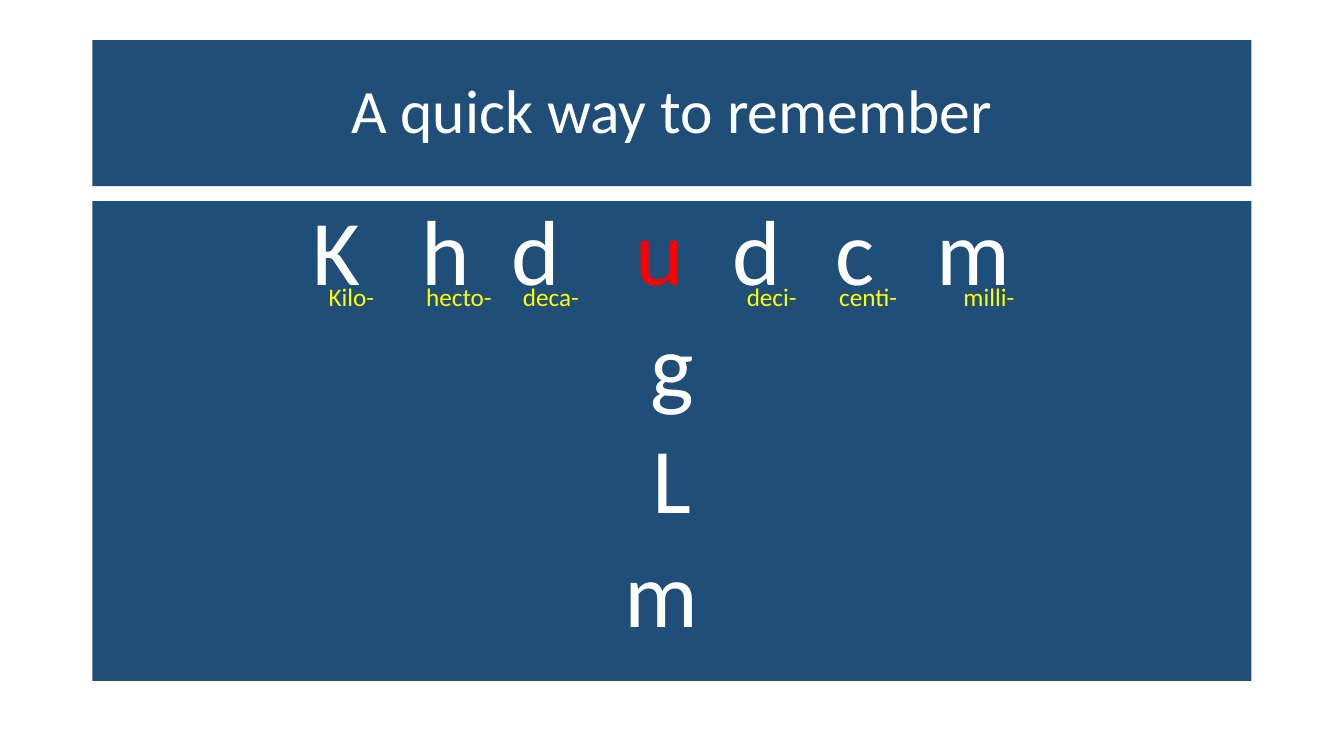
from pptx import Presentation
from pptx.dml.color import RGBColor
from pptx.enum.shapes import MSO_SHAPE
from pptx.enum.text import MSO_ANCHOR, PP_ALIGN
from pptx.oxml.ns import qn
from pptx.util import Cm, Pt
from lxml.etree import SubElement

COLORS = {"panel": "1F4E79", "text": "FFFFFF", "unit": "FF0000", "prefix": "FFFF00"}
FONT = "Calibri"
PANEL_LEFT, PANEL_WIDTH = 2.33, 29.21
PREFIX_TOP, PREFIX_HEIGHT = 6.96, 1.02

# Letter and the centre of its column, measured from the text edge of the panel
LETTERS = [("K", 5.89), ("h", 8.66), ("d", 10.92), ("u", 14.05),
           ("d", 16.48), ("c", 18.97), ("m", 21.95)]
# Prefix, left edge and width of its label
PREFIXES = [("Kilo-", 8.03, 1.68), ("hecto-", 10.49, 2.18), ("deca-", 12.93, 1.93),
            ("deci-", 18.57, 1.78), ("centi-", 20.9, 2.01), ("milli-", 24.03, 1.8)]
BASE_UNITS = ["g", "L", "m "]


class SlideBuilder:
    def __init__(self, deck):
        self.page = deck.slides.add_slide(deck.slide_layouts[6])

    def style(self, target, size, color):
        target.font.name = FONT
        target.font.size = Pt(size)
        target.font.color.rgb = RGBColor.from_string(COLORS[color])

    def panel(self, top, height, anchor):
        box = self.page.shapes.add_shape(
            MSO_SHAPE.RECTANGLE, Cm(PANEL_LEFT), Cm(top), Cm(PANEL_WIDTH), Cm(height))
        box.shadow.inherit = False
        box.fill.solid()
        box.fill.fore_color.rgb = RGBColor.from_string(COLORS["panel"])
        box.line.fill.background()
        box.text_frame.word_wrap = True
        box.text_frame.vertical_anchor = anchor
        return box.text_frame

    def line(self, para, text, size):
        para.alignment = PP_ALIGN.CENTER
        para.line_spacing = 0.9
        para.text = text
        self.style(para, size, "text")

    def letter_row(self, para, letters):
        para.alignment = PP_ALIGN.LEFT
        para.line_spacing = 0.9
        tabs = SubElement(para._p.get_or_add_pPr(), qn("a:tabLst"))
        for letter, center in letters:
            SubElement(tabs, qn("a:tab"), pos=str(Cm(center)), algn="ctr")
            span = para.add_run()
            span.text = "\t" + letter
            self.style(span, 66, "unit" if letter == "u" else "text")

    def prefix(self, text, left, width):
        box = self.page.shapes.add_textbox(
            Cm(left), Cm(PREFIX_TOP), Cm(width), Cm(PREFIX_HEIGHT))
        box.text_frame.word_wrap = False
        para = box.text_frame.paragraphs[0]
        para.text = text
        self.style(para, 18, "prefix")


def main():
    deck = Presentation()
    deck.slide_width, deck.slide_height = Cm(33.87), Cm(19.05)
    slide = SlideBuilder(deck)

    # Title
    title = slide.panel(1.01, 3.68, MSO_ANCHOR.MIDDLE)
    slide.line(title.paragraphs[0], "A quick way to remember", 44)

    # Row of prefix letters with the base units below
    body = slide.panel(5.07, 12.09, MSO_ANCHOR.TOP)
    slide.letter_row(body.paragraphs[0], LETTERS)
    for unit in BASE_UNITS:
        para = body.add_paragraph()
        slide.line(para, unit, 66)
        para.space_before = Pt(10)

    # Prefix names under the letters
    for text, left, width in PREFIXES:
        slide.prefix(text, left, width)

    deck.save("out.pptx")


if __name__ == "__main__":
    main()
